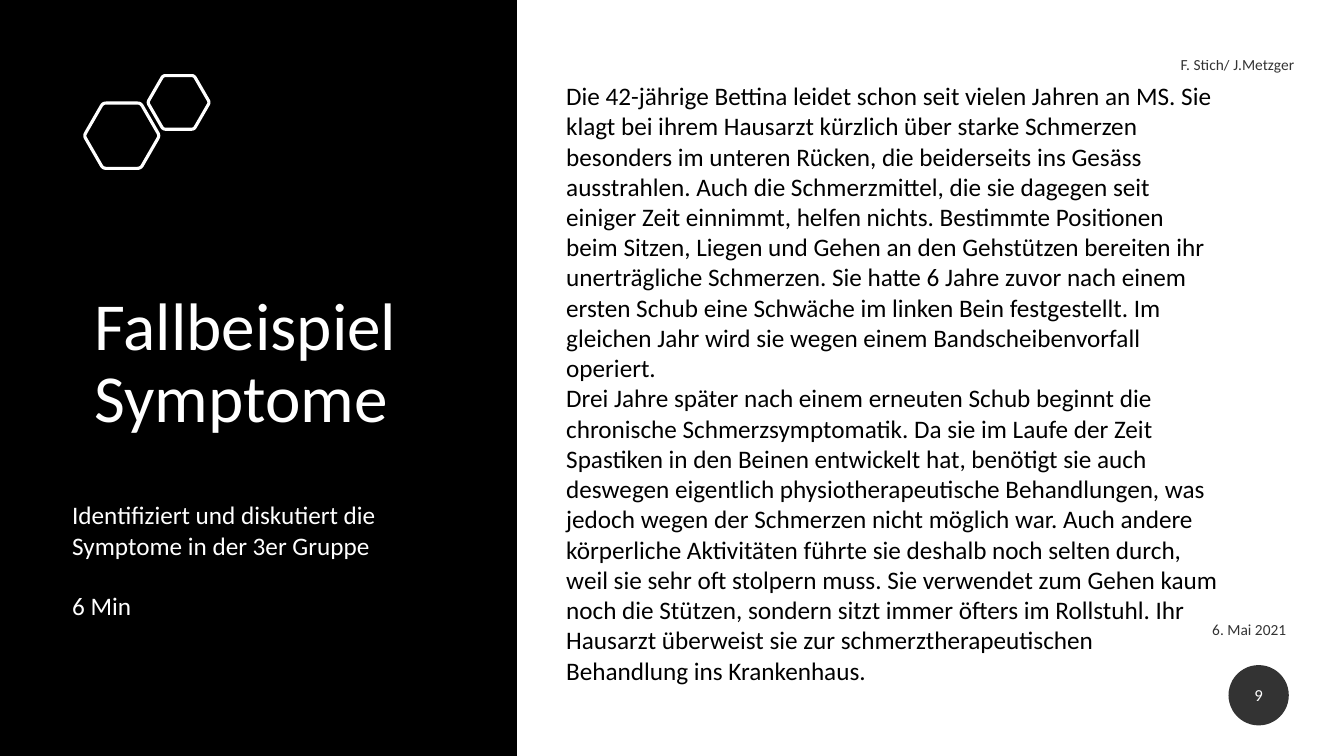
from dataclasses import dataclass
from math import cos, pi, sin

from pptx import Presentation
from pptx.dml.color import RGBColor as Rgb
from pptx.enum.shapes import MSO_SHAPE as Form
from pptx.enum.text import MSO_ANCHOR as Anchor, MSO_AUTO_SIZE as Fit, PP_ALIGN as Align
from pptx.oxml.ns import qn
from pptx.oxml.xmlchemy import OxmlElement as Node
from pptx.slide import Slide
from pptx.util import Cm, Pt

HUES = {"ink": "000000", "paper": "FFFFFF"}

CASE = [
    "Die 42-jährige Bettina leidet schon seit vielen Jahren an MS. Sie klagt bei ihrem "
    "Hausarzt kürzlich über starke Schmerzen besonders im unteren Rücken, die beiderseits "
    "ins Gesäss ausstrahlen. Auch die Schmerzmittel, die sie dagegen seit einiger Zeit "
    "einnimmt, helfen nichts. Bestimmte Positionen beim Sitzen, Liegen und Gehen an den "
    "Gehstützen bereiten ihr unerträgliche Schmerzen. Sie hatte 6 Jahre zuvor nach einem "
    "ersten Schub eine Schwäche im linken Bein festgestellt. Im gleichen Jahr wird sie "
    "wegen einem Bandscheibenvorfall operiert.",
    "Drei Jahre später nach einem erneuten Schub beginnt die chronische "
    "Schmerzsymptomatik. Da sie im Laufe der Zeit Spastiken in den Beinen entwickelt hat, "
    "benötigt sie auch deswegen eigentlich physiotherapeutische Behandlungen, was jedoch "
    "wegen der Schmerzen nicht möglich war. Auch andere körperliche Aktivitäten führte sie "
    "deshalb noch selten durch, weil sie sehr oft stolpern muss. Sie verwendet zum Gehen "
    "kaum noch die Stützen, sondern sitzt immer öfters im Rollstuhl. Ihr Hausarzt "
    "überweist sie zur schmerztherapeutischen Behandlung ins Krankenhaus.",
]
TASK = ["Identifiziert und diskutiert die Symptome in der 3er Gruppe", "6 Min"]


@dataclass
class Page:
    """Hold the style and the slide that is being filled."""

    slide: Slide
    font: str = "Calibri"

    def hue(self, key):
        """Return a named colour."""
        return Rgb.from_string(HUES[key])

    def fade(self, shape, share):
        """Make every colour in a shape opaque by the given share only."""
        for tone in shape.element.iter(qn("a:srgbClr")):
            alpha = Node("a:alpha")
            alpha.set("val", str(share * 1000))
            tone.append(alpha)

    def label(self, shape, lines, size, hue="ink", mid=True, **form):
        """Put formatted paragraphs into a shape."""
        frame = shape.text_frame
        frame.text = "\n".join(lines)
        look = {
            "word_wrap": True,
            "auto_size": Fit.NONE,
            "vertical_anchor": Anchor.MIDDLE if mid else Anchor.TOP,
        }
        for key, val in look.items():
            setattr(frame, key, val)
        for para in frame.paragraphs:
            for key, val in {"alignment": Align.LEFT, **form}.items():
                setattr(para, key, val)
            for run in para.runs:
                for key, val in {"name": self.font, "size": Pt(size)}.items():
                    setattr(run.font, key, val)
                run.font.color.rgb = self.hue(hue)

    def title(self, text, place, size):
        """Move and format the title, above what is drawn so far."""
        head = self.slide.shapes.title
        for key, val in zip(("left", "top", "width", "height"), place):
            setattr(head, key, Cm(val))
        self.label(head, [text], size, "paper", line_spacing=0.9)
        self.slide.shapes.element.append(head.element)

    def text(self, lines, place, size, **form):
        """Add a text box."""
        box = self.slide.shapes.add_textbox(*map(Cm, place))
        self.label(box, lines, size, **form)
        return box

    def note(self, text, place):
        """Add a small grey line set to the right."""
        box = self.text([text], place, 11, alignment=Align.RIGHT, space_after=Pt(6))
        self.fade(box, 80)

    def solid(self, kind, place):
        """Add a filled shape with no outline."""
        shape = self.slide.shapes.add_shape(kind, *map(Cm, place))
        shape.shadow.inherit = False
        shape.fill.solid()
        shape.fill.fore_color.rgb = self.hue("ink")
        shape.line.fill.background()
        return shape

    def badge(self, text, place):
        """Add the round page number."""
        disc = self.solid(Form.OVAL, place)
        self.fade(disc, 80)
        self.label(disc, [text], 12, "paper", alignment=Align.CENTER, space_after=Pt(6))

    def comb(self, x, y, size):
        """Add a hexagon outline with rounded corners."""
        tips = [(x + size * cos(k * pi / 3), y + size * sin(k * pi / 3)) for k in range(6)]
        dots = []
        for k, tip in enumerate(tips):
            ends = [
                [a + 0.08 * (b - a) for a, b in zip(tip, side)]
                for side in (tips[k - 1], tips[(k + 1) % 6])
            ]
            for t in (0, 0.25, 0.5, 0.75, 1):
                dots.append(tuple(
                    Cm((1 - t) ** 2 * a + 2 * t * (1 - t) * v + t * t * b)
                    for a, v, b in zip(ends[0], tip, ends[1])
                ))
        pen = self.slide.shapes.build_freeform(*dots[0])
        pen.add_line_segments(dots[1:], close=True)
        shape = pen.convert_to_shape()
        shape.shadow.inherit = False
        shape.fill.background()
        shape.line.color.rgb = self.hue("paper")
        shape.line.width = Pt(2.25)


deck = Presentation()
deck.slide_width, deck.slide_height = Cm(33.87), Cm(19.05)
page = Page(deck.slides.add_slide(deck.slide_layouts[5]))

page.solid(Form.RECTANGLE, (0, 0, 13.03, 19.05))
page.comb(3.07, 3.42, 0.95)
page.comb(4.5, 2.58, 0.78)
page.title("Fallbeispiel Symptome", (2.13, 3.25, 9.96, 11.89), 48)
page.note("F. Stich/ J.Metzger", (19.61, 1.12, 13.26, 1.02))
page.note("6. Mai 2021", (29.24, 15.34, 3.43, 1.02))
page.badge("9", (30.96, 16.76, 1.52, 1.52))
page.text(CASE, (14.02, 1.9, 16.94, 16.41), 18, mid=False)
task = page.text(TASK, (1.57, 12.47, 9.53, 3.33), 18, hue="paper", mid=False)
task.text_frame.paragraphs[1].space_before = Pt(21.6)

deck.save("out.pptx")
